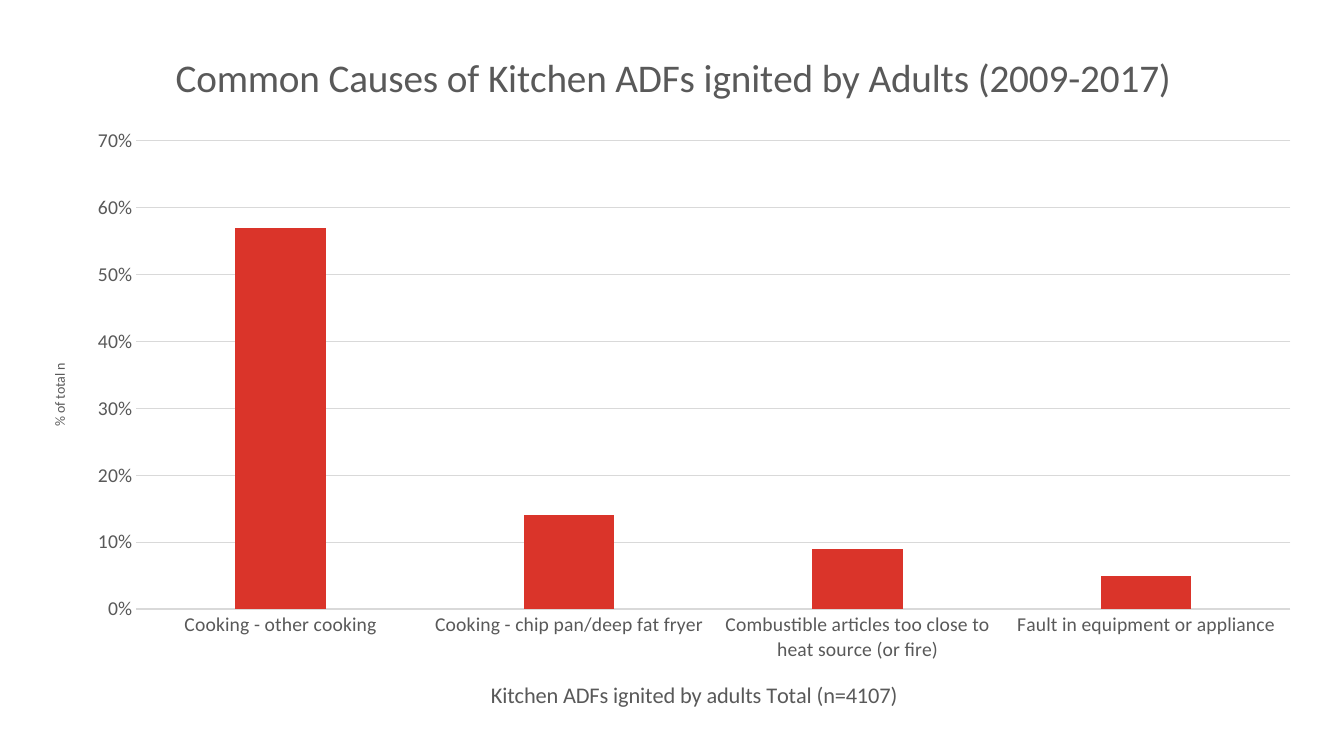
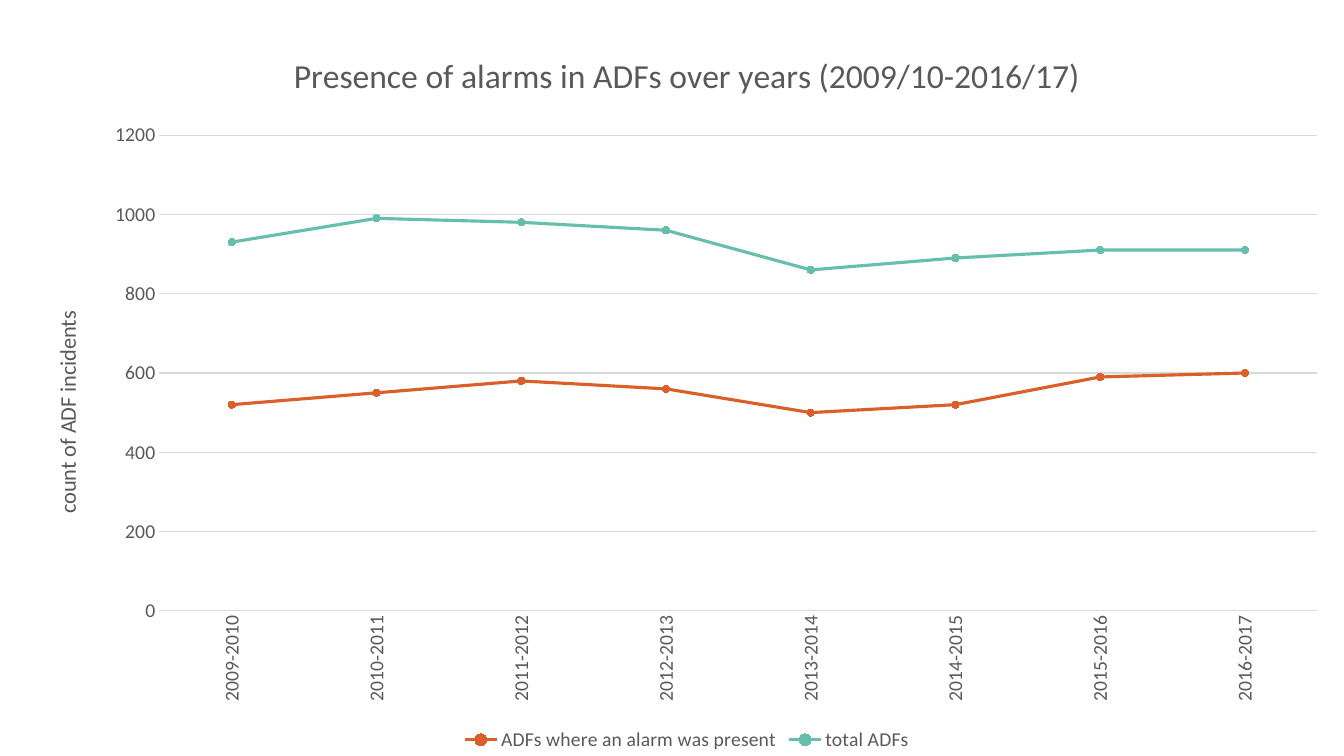
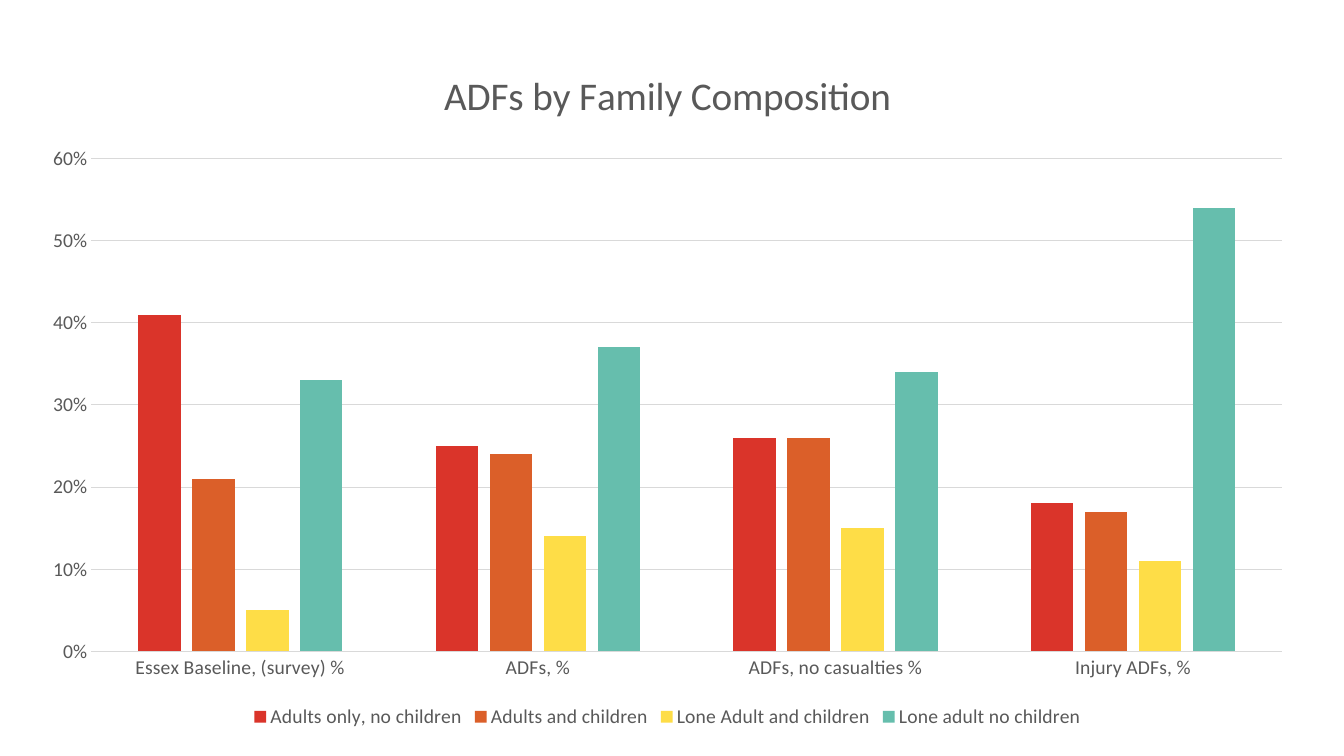
from pptx import Presentation
from pptx import util as u
from pptx.chart.data import CategoryChartData
from pptx.dml.color import RGBColor
from pptx.enum import chart as kinds

RED, ORANGE, YELLOW, TEAL = "DA342A", "DB5F29", "FEDD47", "66BEAD"
UPRIGHT = "-5400000"


def paint(target, color):
    """Give a fill a solid colour."""
    target.solid()
    target.fore_color.rgb = RGBColor.from_string(color)


def style_font(font, size=14, color="595959", name="Calibri", bold=False):
    font.size, font.name, font.bold = u.Pt(size), name, bold
    font.color.rgb = RGBColor.from_string(color)


def write(frame, words, **style):
    paragraph = frame.paragraphs[0]
    run = paragraph.add_run()
    run.text = words
    style_font(run.font, **style)


class ChartDeck:
    """Holds the shared style and the slide being built."""

    GRID = "D9D9D9"

    def __init__(self):
        self.presentation = Presentation()
        self.presentation.slide_width = u.Cm(33.87)
        self.presentation.slide_height = u.Cm(19.05)
        self.slide = None

    def add_slide(self):
        self.slide = self.presentation.slides.add_slide(self.presentation.slide_layouts[6])

    def add_chart(self, kind, box, title, title_size, categories, series, number_format):
        """Place a chart; series holds (name, values, colour) rows."""
        data = CategoryChartData(number_format=number_format)
        data.categories = categories
        for name, values, _ in series:
            data.add_series(name, values)
        frame = self.slide.shapes.add_chart(kind, *map(u.Cm, box), data)
        chart = frame.chart
        style_font(chart.font, size=10, color="000000")
        chart.has_title = True
        chart.chart_title.include_in_layout = False
        write(chart.chart_title.text_frame, title, size=title_size)
        chart.has_legend = len(series) > 1
        if chart.has_legend:
            chart.legend.position = kinds.XL_LEGEND_POSITION.BOTTOM
            chart.legend.include_in_layout = False
            style_font(chart.legend.font)
        chart.plots[0].vary_by_categories = False
        return chart

    def style_axes(self, chart, maximum, step, number_format):
        for axis in (chart.category_axis, chart.value_axis):
            axis.major_tick_mark = axis.minor_tick_mark = kinds.XL_TICK_MARK.NONE
            style_font(axis.tick_labels.font)
        self.style_line(chart.category_axis.format.line, self.GRID, 0.75)
        values = chart.value_axis
        values.minimum_scale, values.maximum_scale, values.major_unit = 0, maximum, step
        values.tick_labels.number_format = number_format
        values.tick_labels.number_format_is_linked = False
        values.format.line.fill.background()
        values.has_major_gridlines = True
        self.style_line(values.major_gridlines.format.line, self.GRID, 0.75)

    def style_line(self, line, color, width):
        paint(line.fill, color)
        line.width = u.Pt(width)

    def add_axis_title(self, axis, words, size):
        axis.has_title = True
        write(axis.axis_title.text_frame, words, size=size)

    def turn_upright(self, chart, query):
        """Rotate the chart text whose body properties the query finds."""
        for body in chart.element.xpath(query):
            body.set("rot", UPRIGHT)
            body.set("vert", "horz")

    def add_value_title(self, chart, words, size):
        self.add_axis_title(chart.value_axis, words, size)
        self.turn_upright(chart, ".//c:valAx/c:title//a:bodyPr")

    def add_columns(self, box, title, categories, series, maximum):
        chart = self.add_chart(kinds.XL_CHART_TYPE.COLUMN_CLUSTERED, box, title, 28,
                               categories, series, "0%")
        self.style_axes(chart, maximum, 0.1, "0%")
        plot = chart.plots[0]
        plot.gap_width, plot.overlap = 219, -27
        for column, (_, _, color) in zip(plot.series, series):
            column.invert_if_negative = False
            paint(column.format.fill, color)
        return chart

    def add_lines(self, box, title, categories, series, maximum, step):
        chart = self.add_chart(kinds.XL_CHART_TYPE.LINE_MARKERS, box, title, 24,
                               categories, series, "General")
        self.style_axes(chart, maximum, step, "General")
        self.turn_upright(chart, ".//c:catAx/c:txPr/a:bodyPr")
        for line, (_, _, color) in zip(chart.plots[0].series, series):
            line.smooth = False
            self.style_line(line.format.line, color, 2.25)
            marker = line.marker
            marker.style, marker.size = kinds.XL_MARKER_STYLE.CIRCLE, 5
            paint(marker.format.fill, color)
            paint(marker.format.line.fill, color)
        return chart


def add_causes_slide(deck):
    deck.add_slide()
    chart = deck.add_columns(
        (0.76, 0.61, 32.41, 17.86),
        "Common Causes of Kitchen ADFs ignited by Adults (2009-2017)",
        ["Cooking - other cooking", "Cooking - chip pan/deep fat fryer",
         "Combustible articles too close to heat source (or fire)",
         "Fault in equipment or appliance"],
        [("Series 1", (0.57, 0.14, 0.09, 0.05), RED)], maximum=0.7)
    deck.add_axis_title(chart.category_axis, "Kitchen ADFs ignited by adults Total (n=4107)", 16)
    deck.add_value_title(chart, "% of total n", 10)


def add_alarms_slide(deck):
    deck.add_slide()
    chart = deck.add_lines(
        (0.76, 0.69, 33.1, 18.36),
        "Presence of alarms in ADFs over years (2009/10-2016/17)",
        [f"{year}-{year + 1}" for year in range(2009, 2017)],
        [("ADFs where an alarm was present", (520, 550, 580, 560, 500, 520, 590, 600), ORANGE),
         ("total ADFs", (930, 990, 980, 960, 860, 890, 910, 910), TEAL)],
        maximum=1200, step=200)
    deck.add_value_title(chart, "count of ADF incidents", 16)


def add_family_slide(deck):
    deck.add_slide()
    deck.add_columns(
        (0.69, 1.07, 32.26, 17.4),
        "ADFs by Family Composition",
        ["Essex Baseline, (survey) %", "ADFs, %", "ADFs, no casualties %", "Injury ADFs, %"],
        [("Adults only, no children", (0.41, 0.25, 0.26, 0.18), RED),
         ("Adults and children", (0.21, 0.24, 0.26, 0.17), ORANGE),
         ("Lone Adult and children", (0.05, 0.14, 0.15, 0.11), YELLOW),
         ("Lone adult no children", (0.33, 0.37, 0.34, 0.54), TEAL)], maximum=0.6)


def main():
    deck = ChartDeck()
    add_causes_slide(deck)
    add_alarms_slide(deck)
    add_family_slide(deck)
    deck.presentation.save("out.pptx")


if __name__ == "__main__":
    main()
